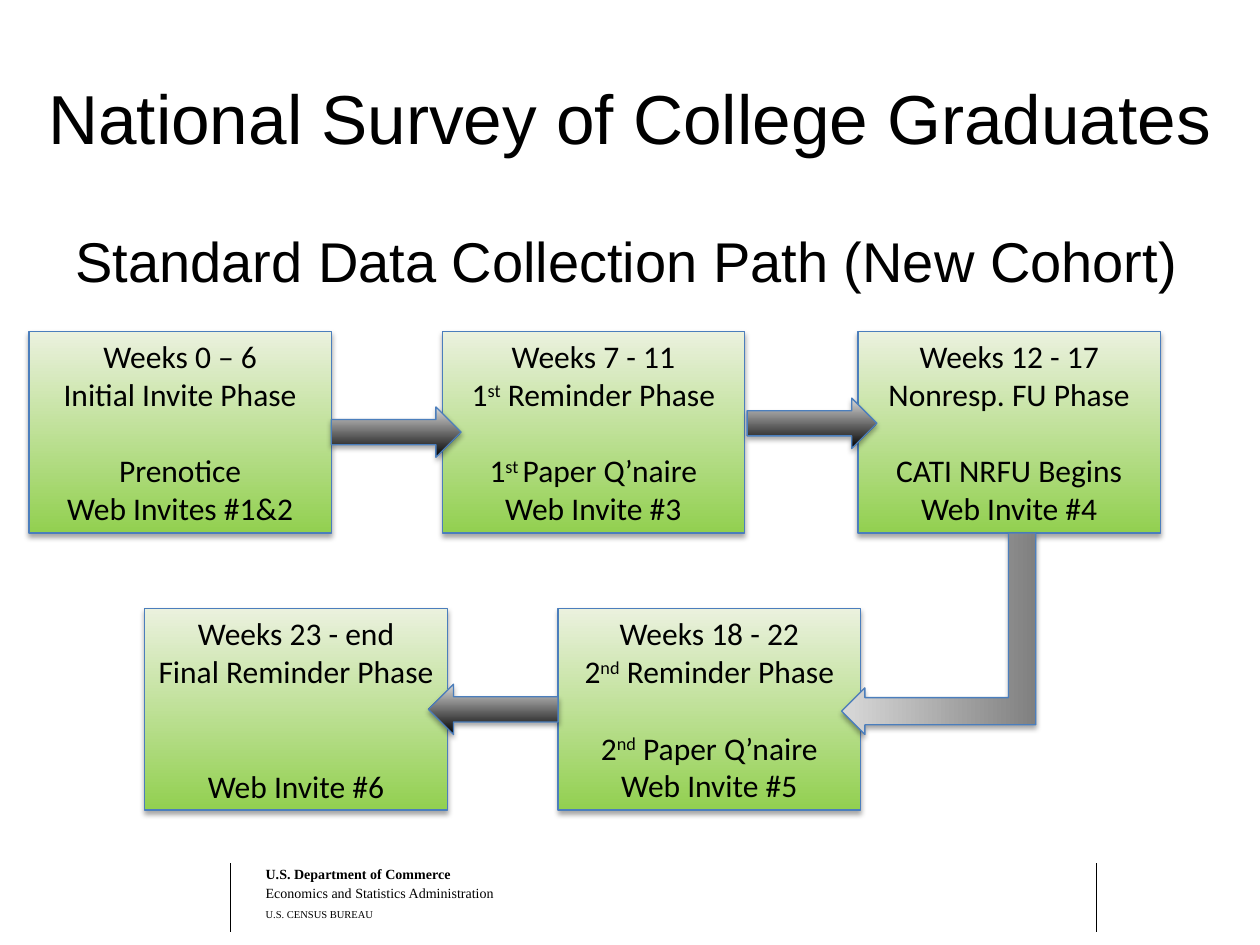
from lxml import etree
from pptx import Presentation
from pptx.dml.color import RGBColor
from pptx.enum.shapes import MSO_CONNECTOR, MSO_SHAPE
from pptx.enum.text import MSO_ANCHOR, PP_ALIGN
from pptx.oxml.ns import qn
from pptx.util import Inches, Pt

BLACK = RGBColor(0x00, 0x00, 0x00)
GREY = RGBColor(0x80, 0x80, 0x80)
SILVER = RGBColor(0xD9, 0xD9, 0xD9)
GREEN = RGBColor(0x92, 0xD0, 0x50)
PALE_GREEN = RGBColor(0xEB, 0xF1, 0xDE)
BLUE = RGBColor(0x4B, 0x7E, 0xBC)
CENTER, LEFT = PP_ALIGN.CENTER, PP_ALIGN.LEFT
MIDDLE, TOP = MSO_ANCHOR.MIDDLE, MSO_ANCHOR.TOP
RECTANGLE = MSO_SHAPE.RECTANGLE
RIGHT_ARROW, LEFT_ARROW = MSO_SHAPE.RIGHT_ARROW, MSO_SHAPE.LEFT_ARROW
BENT_ARROW = MSO_SHAPE.BENT_UP_ARROW
STRAIGHT = MSO_CONNECTOR.STRAIGHT

prs = Presentation()
prs.slide_width, prs.slide_height = Inches(10), Inches(7.5)
slide = prs.slides.add_slide(prs.slide_layouts[6])
CELL = prs.slide_width / 100
LINE_GAP = 22


def cells(*counts):
    return [round(count * CELL) for count in counts]


def add_step(kind, place, dark, light):
    step = slide.shapes.add_shape(kind, *cells(*place))
    step.fill.gradient()
    step.fill.gradient_angle = 90
    for stop, color in zip(step.fill.gradient_stops, (dark, light)):
        stop.color.rgb = color
    step.line.color.rgb = BLUE
    step.line.width = Pt(0.75)
    step.shadow.inherit = False
    effects = step._element.spPr.find(qn("a:effectLst"))
    outer = etree.SubElement(effects, qn("a:outerShdw"), blurRad=str(Pt(3.1)),
                             dist=str(Pt(1.8)), dir="5400000", rotWithShape="0")
    shade = etree.SubElement(outer, qn("a:srgbClr"), val=str(BLACK))
    etree.SubElement(shade, qn("a:alpha"), val="35000")
    return step


agency = slide.shapes.add_textbox(*cells(20.1, 68.2, 28.1, 5.4)).text_frame
agency.text = ("U.S. Department of Commerce\n"
               "Economics and Statistics Administration\nU.S. CENSUS BUREAU")
for paragraph, size, bold in zip(agency.paragraphs, (8, 8, 6), (True, False, False)):
    paragraph.font.name = "Times New Roman"
    paragraph.font.size = Pt(size)
    paragraph.font.bold = bold
    paragraph.font.color.rgb = BLACK
    if not bold:
        paragraph.line_spacing = Pt(11)

for column in (18.3, 87):
    rule = slide.shapes.add_connector(STRAIGHT, *cells(column, 68.5, column, 74))
    rule.line.color.rgb = BLACK
    rule.line.width = Pt(0.75)
    etree.SubElement(rule._element.spPr, qn("a:effectLst"))

headings = [
    ("National Survey of College Graduates", (0, 3, 100, 12.5), 39.6, CENTER, MIDDLE),
    ("Standard Data Collection Path (New Cohort)", (5, 17.5, 95, 6), 32, LEFT, TOP),
]
for wording, place, size, alignment, anchor in headings:
    heading = slide.shapes.add_textbox(*cells(*place)).text_frame
    heading.word_wrap = True
    heading.vertical_anchor = anchor
    heading.text = wording
    line = heading.paragraphs[0]
    line.alignment = alignment
    line.font.name = "Arial"
    line.font.size = Pt(size)
    line.font.color.rgb = BLACK

UPPER, LOWER = 26.3, 48.3
phases = [
    (2.3, UPPER, ["Weeks 0 – 6", "Initial Invite Phase"],
     ["Prenotice", "Web Invites #1&2"]),
    (35.1, UPPER, ["Weeks 7 - 11", "1^st^ Reminder Phase"],
     ["1^st ^Paper Q’naire", "Web Invite #3"]),
    (68.1, UPPER, ["Weeks 12 - 17", "Nonresp. FU Phase"],
     ["CATI NRFU Begins", "Web Invite #4"]),
    (44.3, LOWER, ["Weeks 18 - 22", "2^nd^ Reminder Phase"],
     ["2^nd^ Paper Q’naire", "Web Invite #5"]),
    (11.5, LOWER, ["Weeks 23 - end", "Final Reminder Phase"],
     ["Web Invite #6"]),
]
for column, row, period, contacts in phases:
    phase = add_step(RECTANGLE, (column, row, 24, 16), GREEN, PALE_GREEN).text_frame
    phase.word_wrap = True
    phase.vertical_anchor = MIDDLE
    for index, wording in enumerate(period + contacts):
        line = phase.add_paragraph() if index else phase.paragraphs[0]
        line.alignment = CENTER
        if index == len(period):
            line.space_before = Pt(LINE_GAP * (3 - len(contacts)))
        for part, piece in enumerate(wording.split("^")):
            run = line.add_run()
            run.text = piece
            run.font.name = "Calibri"
            run.font.size = Pt(18)
            run.font.color.rgb = BLACK
            if part % 2:
                run.font._element.set("baseline", "30000")

for kind, column, row in ((RIGHT_ARROW, 59.3, 31.6), (RIGHT_ARROW, 26.3, 32.3),
                          (LEFT_ARROW, 34, 54.3)):
    add_step(kind, (column, row, 10.3, 4), BLACK, SILVER)

turn = add_step(BENT_ARROW, (66.5, 42.6, 16, 15.4), GREY, SILVER)
for index, share in enumerate((0.14, 0.12, 0.12)):
    turn.adjustments[index] = share
turn.rotation = 90
turn._element.spPr.xfrm.set("flipV", "1")

prs.save("out.pptx")
